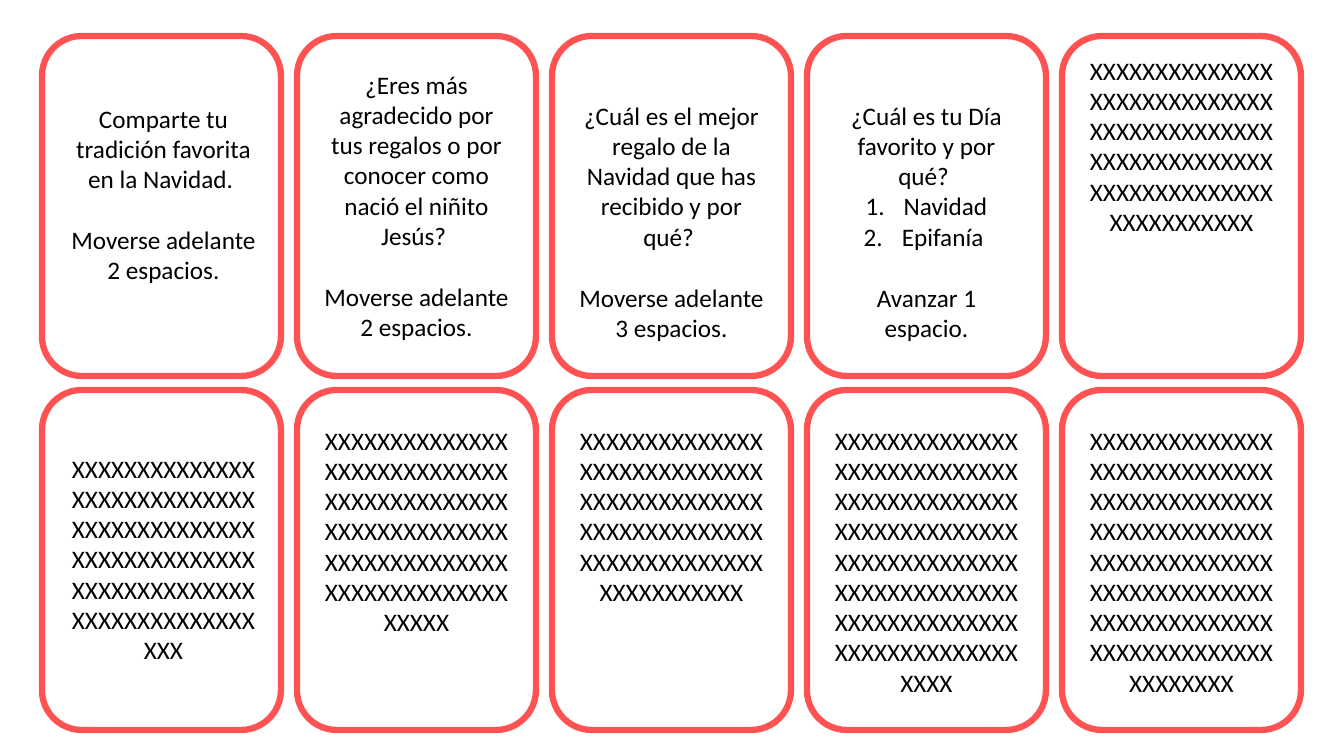
from lxml import etree
from pptx import Presentation
from pptx.dml.color import RGBColor
from pptx.enum.shapes import MSO_SHAPE as Preset
from pptx.enum.text import MSO_AUTO_SIZE as AutoSize, PP_ALIGN as Align
from pptx.oxml.ns import qn
from pptx.util import Emu, Pt

# Paragraph kinds
PLAIN, NUMBERED, SPACED = "plain", "numbered", "spaced"

# One tuple per card, row by row: text offset x, text top, text height, paragraphs
CARD_ROWS = [
    [
        (18, 98, 194, [
            (PLAIN, "Comparte tu tradición favorita en la Navidad. "),
            (SPACED, "Moverse adelante 2 espacios."),
        ]),
        (16, 64, 285, [
            (PLAIN, "¿Eres más agradecido por tus regalos o por conocer como "
                    "nació el niñito Jesús? "),
            (SPACED, "Moverse adelante 2 espacios."),
        ]),
        (16, 95, 254, [
            (PLAIN, "¿Cuál es el mejor regalo de la Navidad que has recibido "
                    "y por qué? "),
            (SPACED, "Moverse adelante 3 espacios."),
        ]),
        (16, 95, 254, [
            (PLAIN, "¿Cuál es tu Día favorito y por qué? "),
            (NUMBERED, "Navidad"),
            (NUMBERED, "Epifanía "),
            (SPACED, "Avanzar 1 espacio."),
        ]),
        (16, 50, 194, [(PLAIN, "X" * 81)]),
    ],
    [
        (18, 448, 224, [(PLAIN, "X" * 87)]),
        (16, 420, 224, [(PLAIN, "X" * 89)]),
        (16, 420, 194, [(PLAIN, "X" * 81)]),
        (16, 420, 285, [(PLAIN, "X" * 116)]),
        (16, 420, 285, [(PLAIN, "X" * 120)]),
    ],
]

SLIDE_WIDTH, SLIDE_HEIGHT = 1344, 756
CARD_LEFT, CARD_TOP = 42, 36
CARD_WIDTH, CARD_HEIGHT = 239, 340
COLUMN_STEP, ROW_STEP = 255, 354
TEXT_WIDTH = 207
LIST_INDENT = 38

FONT_NAME = "Calibri"
FONT_SIZE = Pt(18)
BLOCK_GAP = Pt(22)
BORDER_WIDTH = Pt(4.5)

WHITE = RGBColor(0xFF, 0xFF, 0xFF)
BLACK = RGBColor(0x00, 0x00, 0x00)
CORAL = RGBColor(0xFF, 0x53, 0x53)


def px(length):
    """Turn slide pixels (100.8 to the inch) into EMU."""
    return Emu(round(length * 914400 / 100.8))


def number_paragraph(paragraph):
    properties = paragraph._p.get_or_add_pPr()
    properties.set("marL", str(px(LIST_INDENT)))
    properties.set("indent", str(-px(LIST_INDENT)))
    etree.SubElement(properties, qn("a:buFont"), typeface="+mj-lt")
    etree.SubElement(properties, qn("a:buAutoNum"), type="arabicPeriod")


def add_frame(group, left, top):
    frame = group.shapes.add_shape(
        Preset.ROUNDED_RECTANGLE, px(left), px(top), px(CARD_WIDTH), px(CARD_HEIGHT))
    frame.shadow.inherit = False
    frame.fill.solid()
    frame.fill.fore_color.rgb = WHITE
    frame.line.color.rgb = CORAL
    frame.line.width = BORDER_WIDTH


def add_card_text(group, left, top, height, paragraphs):
    box = group.shapes.add_textbox(px(left), px(top), px(TEXT_WIDTH), px(height))
    text_frame = box.text_frame
    text_frame.word_wrap = True
    text_frame.auto_size = AutoSize.SHAPE_TO_FIT_TEXT
    for index, (kind, text) in enumerate(paragraphs):
        paragraph = text_frame.add_paragraph() if index else text_frame.paragraphs[0]
        paragraph.alignment = Align.CENTER
        if kind == SPACED:
            paragraph.space_before = BLOCK_GAP
        elif kind == NUMBERED:
            number_paragraph(paragraph)
        run = paragraph.add_run()
        run.text = text
        run.font.name = FONT_NAME
        run.font.size = FONT_SIZE
        run.font.color.rgb = BLACK


def main():
    presentation = Presentation()
    presentation.slide_width = px(SLIDE_WIDTH)
    presentation.slide_height = px(SLIDE_HEIGHT)
    slide = presentation.slides.add_slide(presentation.slide_layouts[6])

    for row, cards in enumerate(CARD_ROWS):
        for column, (text_offset, text_top, text_height, paragraphs) in enumerate(cards):
            left = CARD_LEFT + column * COLUMN_STEP
            group = slide.shapes.add_group_shape()
            add_frame(group, left, CARD_TOP + row * ROW_STEP)
            add_card_text(group, left + text_offset, text_top, text_height, paragraphs)

    presentation.save("out.pptx")


if __name__ == "__main__":
    main()
